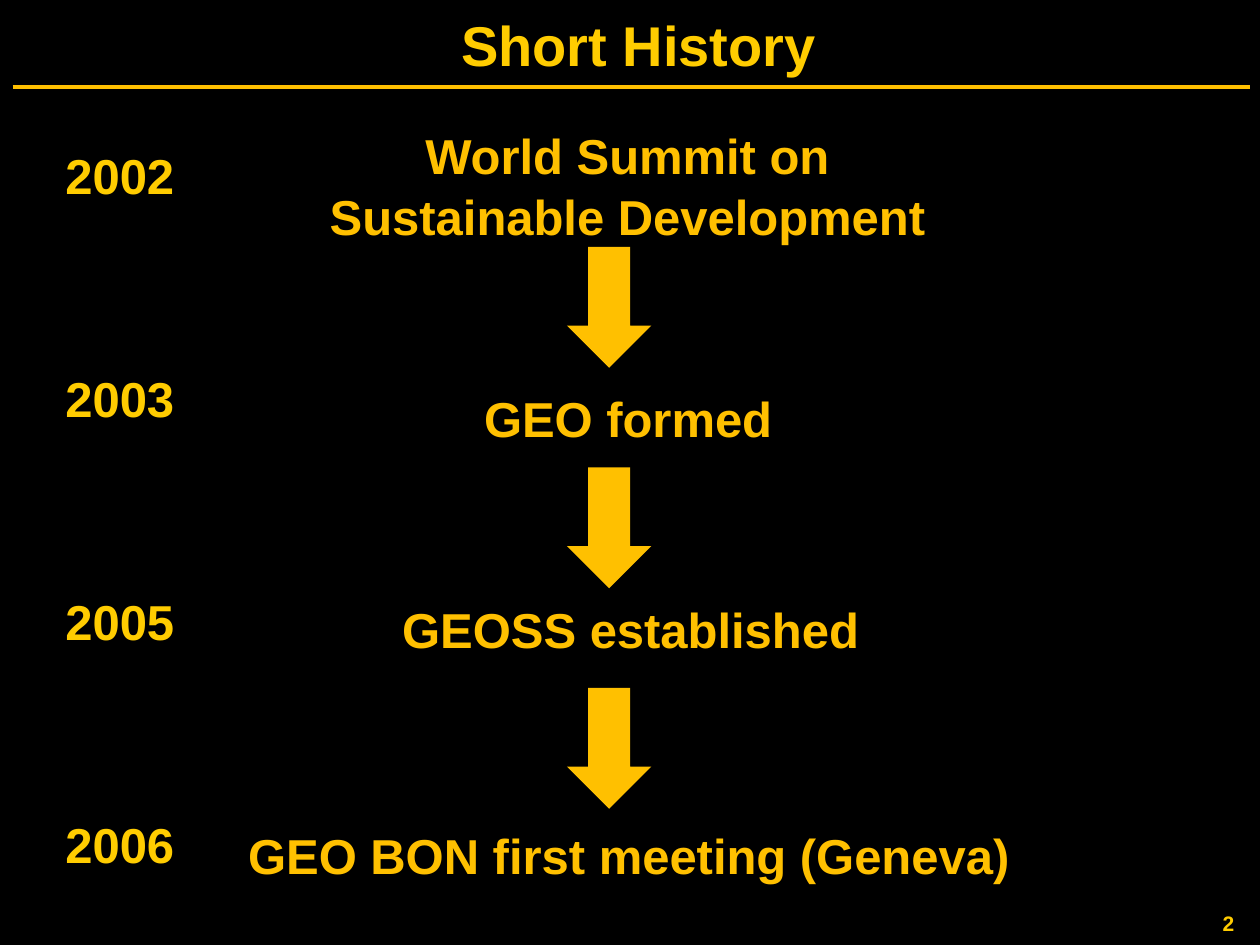
from pptx import Presentation
from pptx import util as u
from pptx.dml import color
from pptx.enum import shapes, text
from pptx.oxml.ns import qn
from lxml import etree

In = u.Inches
COLORS = {"black": "000000", "gold": "FFCC00", "amber": "FFC000"}


def rgb(name):
    return color.RGBColor.from_string(COLORS[name])


def add_text(box, lines, size, fill, align="CENTER", spacing=1.0, gap=0,
             wrap=True, anchor="TOP"):
    sp = s.shapes.add_textbox(*[In(v) for v in box])
    tf = sp.text_frame
    tf.word_wrap = wrap
    tf.vertical_anchor = text.MSO_ANCHOR[anchor]
    tf.text = "\n".join(lines)
    for i, p in enumerate(tf.paragraphs):
        p.alignment = text.PP_ALIGN[align]
        p.line_spacing = spacing
        p.space_before = u.Pt(gap if i else 0)
        f = p.runs[0].font
        f.name, f.size, f.bold = "Arial", u.Pt(size), True
        f.color.rgb = rgb(fill)


prs = Presentation()
prs.slide_width, prs.slide_height = In(10), In(7.5)
s = prs.slides.add_slide(prs.slide_layouts[6])
s.background.fill.solid()
s.background.fill.fore_color.rgb = rgb("black")

# Rule under the title
rule = s.shapes.add_connector(shapes.MSO_CONNECTOR.STRAIGHT,
                              In(0.1), In(0.69), In(9.92), In(0.69))
rule.line.color.rgb = rgb("amber")
rule.line.width = u.Pt(2)
etree.SubElement(rule._element.spPr, qn("a:effectLst"))

# Page number and title
add_text((9.5, 7.25, 0.5, 0.23), ["2"], 12, "gold", spacing=0.6)
add_text((1.17, 0.17, 7.8, 0.46), ["Short History"], 32, "gold",
         spacing=0.8, anchor="MIDDLE")

# Years, one every 1.75 inches
add_text((0.42, 1.08, 2.31, 5.7), ["2002", "2003", "2005", "2006"], 28, "gold",
         align="LEFT", spacing=1.05, gap=92.2)

# Milestones: box, wording, line spacing, wrapping
milestones = [
    ((2.48, 0.92, 5, 1.04), "World Summit on Sustainable Development", 1.05, True),
    ((3.73, 3.01, 2.51, 0.57), "GEO formed", 1.05, False),
    ((3.07, 4.87, 3.87, 0.4), "GEOSS established", 0.6, False),
    ((1.83, 6.67, 6.32, 0.38), "GEO BON first meeting (Geneva)", 0.6, False),
]
for box, label, spacing, wrap in milestones:
    add_text(box, [label], 28, "amber", spacing=spacing, wrap=wrap)

# Arrows between milestones
for i in range(3):
    arrow = s.shapes.add_shape(shapes.MSO_SHAPE.DOWN_ARROW, In(4.5),
                               In(1.96 + 1.75 * i), In(0.67), In(0.96))
    arrow.shadow.inherit = False
    arrow.fill.solid()
    arrow.fill.fore_color.rgb = rgb("amber")
    arrow.line.fill.background()

prs.save("out.pptx")
